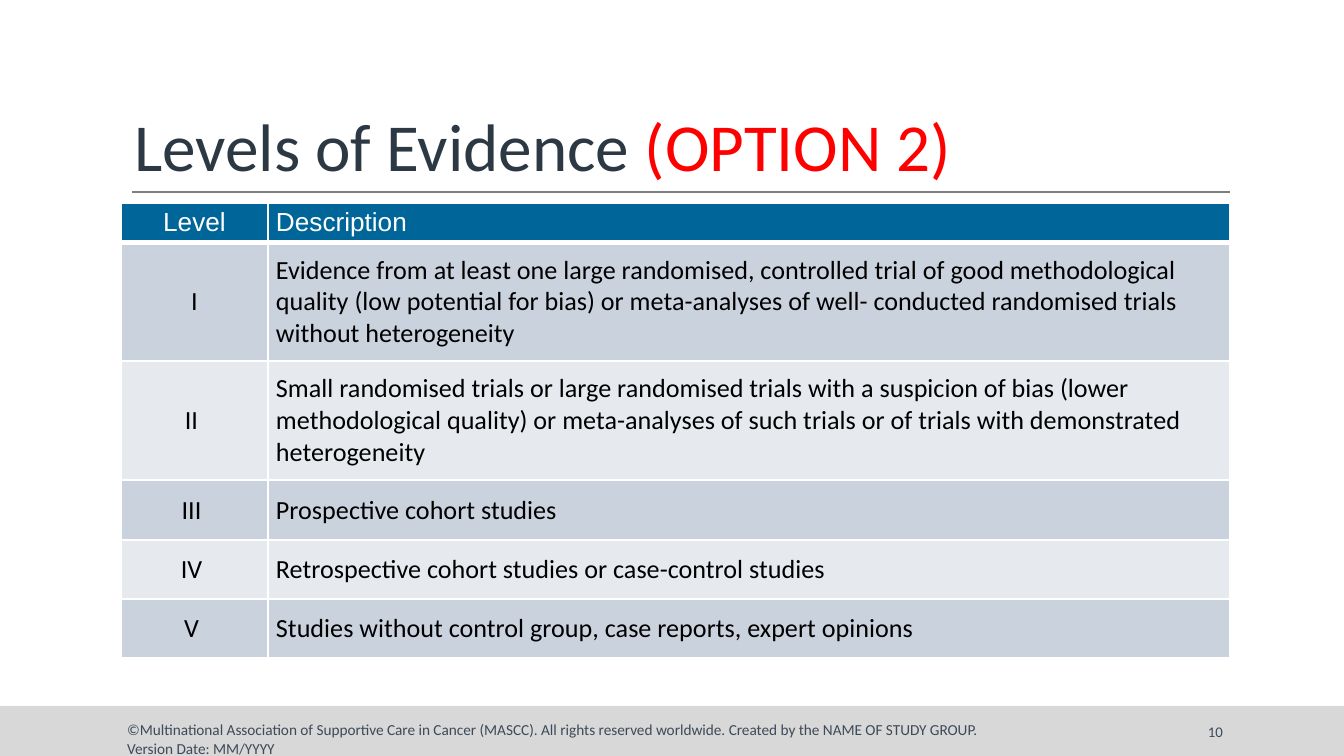
from lxml.etree import SubElement
from pptx import Presentation
from pptx.dml.color import RGBColor
from pptx.enum.shapes import MSO_CONNECTOR, MSO_SHAPE
from pptx.enum.text import MSO_ANCHOR, PP_ALIGN
from pptx.oxml import parse_xml
from pptx.oxml.ns import nsdecls, qn
from pptx.util import Pt

EMU_PER_PX = 914400 / 134.4

HEADINGS = ("Level", "Description")
LEVELS = [
    ("I", "Evidence from at least one large randomised, controlled trial of good methodological "
          "quality (low potential for bias) or meta-analyses of well- conducted randomised trials "
          "without heterogeneity"),
    ("II ", "Small randomised trials or large randomised trials with a suspicion of bias (lower "
            "methodological quality) or meta-analyses of such trials or of trials with demonstrated "
            "heterogeneity"),
    ("III ", "Prospective cohort studies"),
    ("IV ", "Retrospective cohort studies or case-control studies"),
    ("V ", "Studies without control group, case reports, expert opinions"),
]
COLUMN_WIDTHS = (147, 962)
COLUMN_ALIGNS = (PP_ALIGN.CENTER, PP_ALIGN.LEFT)
ROW_HEIGHTS = (39, 119, 119, 60, 59, 59)
COPYRIGHT = ("©Multinational Association of Supportive Care in Cancer (MASCC). All rights reserved "
             "worldwide. Created by the NAME OF STUDY GROUP. Version Date: MM/YYYY")


def px(length):
    return round(length * EMU_PER_PX)


def color(value):
    return RGBColor.from_string(value)


def add_text(paragraph, text, size=14, font="Calibri", ink="000000", align=PP_ALIGN.LEFT):
    paragraph.alignment = align
    run = paragraph.add_run()
    run.text = text
    run.font.size = Pt(size)
    run.font.name = font
    run.font.color.rgb = color(ink)


class SlideBuilder:
    title_ink = "2C3843"
    option_ink = "FF0000"
    footer_ink = "3D4A59"
    footer_fill = "D8D8D8"
    rule_color = "7F7F7F"
    header_fill = "006699"
    header_ink = "FFFFFF"
    stripes = ("CAD2DD", "E6EAEF")
    border = "FFFFFF"

    def __init__(self, slide):
        self.slide = slide

    def rectangle(self, x, y, width, height, fill):
        band = self.slide.shapes.add_shape(
            MSO_SHAPE.RECTANGLE, px(x), px(y), px(width), px(height))
        band.shadow.inherit = False
        band.fill.solid()
        band.fill.fore_color.rgb = color(fill)
        band.line.fill.background()

    def line(self, x1, y1, x2, y2):
        rule = self.slide.shapes.add_connector(
            MSO_CONNECTOR.STRAIGHT, px(x1), px(y1), px(x2), px(y2))
        rule.line.color.rgb = color(self.rule_color)
        rule.line.width = Pt(0.75)
        SubElement(rule._element.spPr, qn("a:effectLst"))

    def text(self, x, y, width, height, anchor=MSO_ANCHOR.TOP):
        frame = self.slide.shapes.add_textbox(
            px(x), px(y), px(width), px(height)).text_frame
        frame.word_wrap = True
        frame.vertical_anchor = anchor
        return frame.paragraphs[0]

    def cell(self, cell, text, fill, bottom=1, **text_format):
        cell.vertical_anchor = MSO_ANCHOR.MIDDLE
        cell.margin_left = cell.margin_right = px(8)
        cell.margin_top = cell.margin_bottom = px(4)
        cell.fill.solid()
        cell.fill.fore_color.rgb = color(fill)
        properties = cell._tc.get_or_add_tcPr()
        for index, (side, width) in enumerate(zip("LRTB", (1, 1, 1, bottom))):
            properties.insert(index, parse_xml(
                f'<a:ln{side} {nsdecls("a")} w="{int(Pt(width))}"><a:solidFill>'
                f'<a:srgbClr val="{self.border}"/></a:solidFill></a:ln{side}>'))
        add_text(cell.text_frame.paragraphs[0], text, **text_format)

    def table(self, x, y):
        table = self.slide.shapes.add_table(
            len(ROW_HEIGHTS), len(COLUMN_WIDTHS), px(x), px(y),
            px(sum(COLUMN_WIDTHS)), px(sum(ROW_HEIGHTS))).table
        for column, width in zip(table.columns, COLUMN_WIDTHS):
            column.width = px(width)
        for row, height in zip(table.rows, ROW_HEIGHTS):
            row.height = px(height)
        for number, entries in enumerate([HEADINGS, *LEVELS]):
            if number == 0:
                style = dict(fill=self.header_fill, bottom=3, font="Arial", ink=self.header_ink)
            else:
                style = dict(fill=self.stripes[(number - 1) % 2])
            for column, (entry, align) in enumerate(zip(entries, COLUMN_ALIGNS)):
                self.cell(table.cell(number, column), entry, align=align, **style)


def main():
    presentation = Presentation()
    presentation.slide_width = px(1344)
    presentation.slide_height = px(756)
    builder = SlideBuilder(presentation.slides.add_slide(presentation.slide_layouts[6]))

    builder.rectangle(0, 706, 1344, 50, builder.footer_fill)
    builder.line(132, 192, 1230, 192)

    title = builder.text(121, 32, 1109, 160, MSO_ANCHOR.BOTTOM)
    title.line_spacing = 0.85
    add_text(title, "Levels of Evidence ", size=36, ink=builder.title_ink)
    add_text(title, "(OPTION 2)", size=36, ink=builder.option_ink)

    page_number = builder.text(1091, 712, 145, 40, MSO_ANCHOR.MIDDLE)
    add_text(page_number, "10", size=7.9, ink=builder.footer_ink, align=PP_ALIGN.RIGHT)
    copyright_line = builder.text(114, 714, 884, 40)
    add_text(copyright_line, COPYRIGHT, size=8.2, ink=builder.footer_ink)

    builder.table(121, 203)
    presentation.save("out.pptx")


if __name__ == "__main__":
    main()
